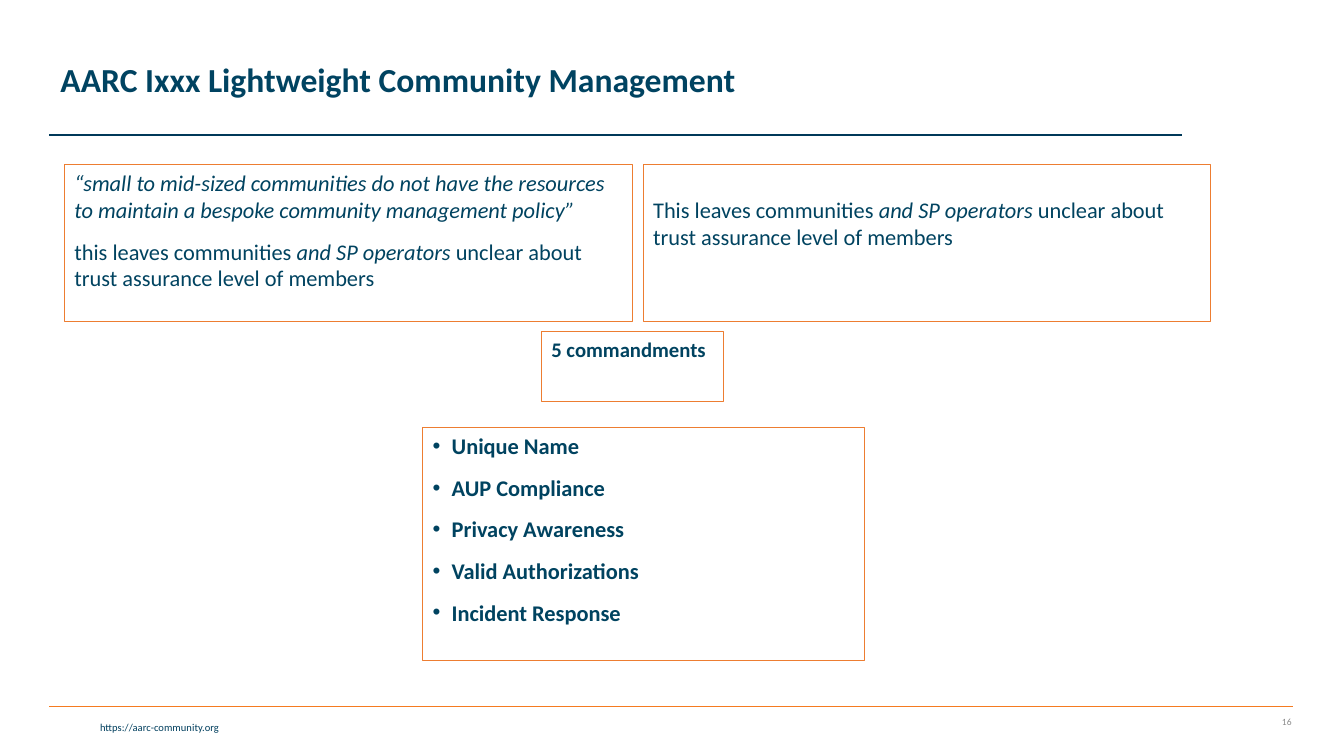
from lxml.etree import SubElement
from pptx import Presentation
from pptx.dml.color import RGBColor
from pptx.enum.shapes import MSO_CONNECTOR as Connector, MSO_SHAPE as Shape
from pptx.enum.text import MSO_ANCHOR as Anchor, MSO_AUTO_SIZE as AutoSize, PP_ALIGN as Align
from pptx.oxml.ns import qn
from pptx.util import Inches, Pt

COLORS = {
    "text": "004360",
    "title": "004361",
    "url": "003F5E",
    "number": "8C8C8C",
    "header": "003959",
    "footer": "F57B20",
    "border": "ED7D31",
}


def rgb(name):
    return RGBColor.from_string(COLORS[name])


def add_run(paragraph, text, size=16, color="text", bold=False, italic=False):
    run = paragraph.add_run()
    run.text = text
    font = run.font
    font.name = "Calibri"
    font.size = Pt(size)
    font.bold = bold
    font.italic = italic
    font.color.rgb = rgb(color)


class SlideBuilder:
    space_before = Pt(10.5)
    border_width = Pt(0.75)

    def __init__(self, slide):
        self.slide = slide

    def place(self, shape, box):
        shape.left, shape.top, shape.width, shape.height = map(Inches, box)

    def outline(self, shape):
        shape.fill.background()
        shape.line.color.rgb = rgb("border")
        shape.line.width = self.border_width

    def frame(self, shape, anchor=Anchor.TOP, top=0.05):
        frame = shape.text_frame
        frame.word_wrap = True
        frame.auto_size = AutoSize.NONE
        frame.vertical_anchor = anchor
        frame.margin_left = frame.margin_right = Inches(0.1)
        frame.margin_top, frame.margin_bottom = Inches(top), Inches(0.05)
        return frame

    def paragraphs(self, frame, count):
        for index in range(count):
            paragraph = frame.add_paragraph() if index else frame.paragraphs[0]
            paragraph.alignment = Align.LEFT
            paragraph.space_before = self.space_before if index else Pt(0)
            yield paragraph

    def title(self, text, box):
        title = self.slide.shapes.title
        self.place(title, box)
        paragraph = self.frame(title, Anchor.MIDDLE).paragraphs[0]
        paragraph.alignment = Align.LEFT
        paragraph.line_spacing = 0.9
        add_run(paragraph, text, size=24, color="title", bold=True)

    def rule(self, left, right, y, color):
        line = self.slide.shapes.add_connector(
            Connector.STRAIGHT, Inches(left), Inches(y), Inches(right), Inches(y))
        line.line.color.rgb = rgb(color)
        line.line.width = Pt(1)
        SubElement(line._element.spPr, qn("a:effectLst"))

    def label(self, text, box, anchor=Anchor.TOP, **style):
        label = self.slide.shapes.add_textbox(*map(Inches, box))
        paragraph = self.frame(label, anchor).paragraphs[0]
        paragraph.alignment = Align.RIGHT
        add_run(paragraph, text, **style)

    def panel(self, contents, box, top=0.05):
        panel = self.slide.shapes.add_shape(Shape.RECTANGLE, *map(Inches, box))
        panel.shadow.inherit = False
        self.outline(panel)
        frame = self.frame(panel, top=top)
        for paragraph, runs in zip(self.paragraphs(frame, len(contents)), contents):
            for text, style in runs:
                add_run(paragraph, text, **style)

    def bullets(self, items, box):
        body = self.slide.placeholders[1]
        self.place(body, box)
        self.outline(body)
        frame = self.frame(body)
        for paragraph, item in zip(self.paragraphs(frame, len(items)), items):
            properties = paragraph._p.get_or_add_pPr()
            properties.set("marL", str(Inches(0.19)))
            properties.set("indent", str(-Inches(0.19)))
            bullet_color = SubElement(properties, qn("a:buClr"))
            SubElement(bullet_color, qn("a:srgbClr"), val=COLORS["text"])
            SubElement(properties, qn("a:buFont"), typeface="Arial")
            SubElement(properties, qn("a:buChar"), char="•")
            add_run(paragraph, item, bold=True)


def main():
    deck = Presentation()
    deck.slide_width, deck.slide_height = Inches(13.33), Inches(7.5)
    builder = SlideBuilder(deck.slides.add_slide(deck.slide_layouts[1]))

    builder.rule(0.49, 12.82, 7.01, "footer")
    builder.label("https://aarc-community.org", (0.28, 7.1, 1.99, 0.23),
                  size=7.5, color="url")
    builder.rule(0.49, 11.72, 1.34, "header")
    builder.label("16", (12.1, 7.01, 0.81, 0.3), Anchor.MIDDLE,
                  size=6.8, color="number")
    builder.title("AARC Ixxx Lightweight Community Management",
                  (0.5, 0.08, 10.51, 1.45))

    quote = [("“small to mid-sized communities do not have the resources "
              "to maintain a bespoke community management policy”", {"italic": True})]
    effect = [("and SP operators ", {"italic": True}),
              ("unclear about trust assurance level of members", {})]
    builder.panel([quote, [("this leaves communities ", {}), *effect]],
                  (0.64, 1.63, 5.63, 1.56))
    builder.panel([[("5 commandments", {"size": 14.8, "bold": True})]],
                  (5.37, 3.29, 1.81, 0.69))
    builder.panel([[("This leaves communities ", {}), *effect]],
                  (6.38, 1.63, 5.63, 1.56), top=0.32)
    builder.bullets(["Unique Name", "AUP Compliance", "Privacy Awareness",
                     "Valid Authorizations", "Incident Response"],
                    (4.19, 4.24, 4.38, 2.31))
    deck.save("out.pptx")


if __name__ == "__main__":
    main()
